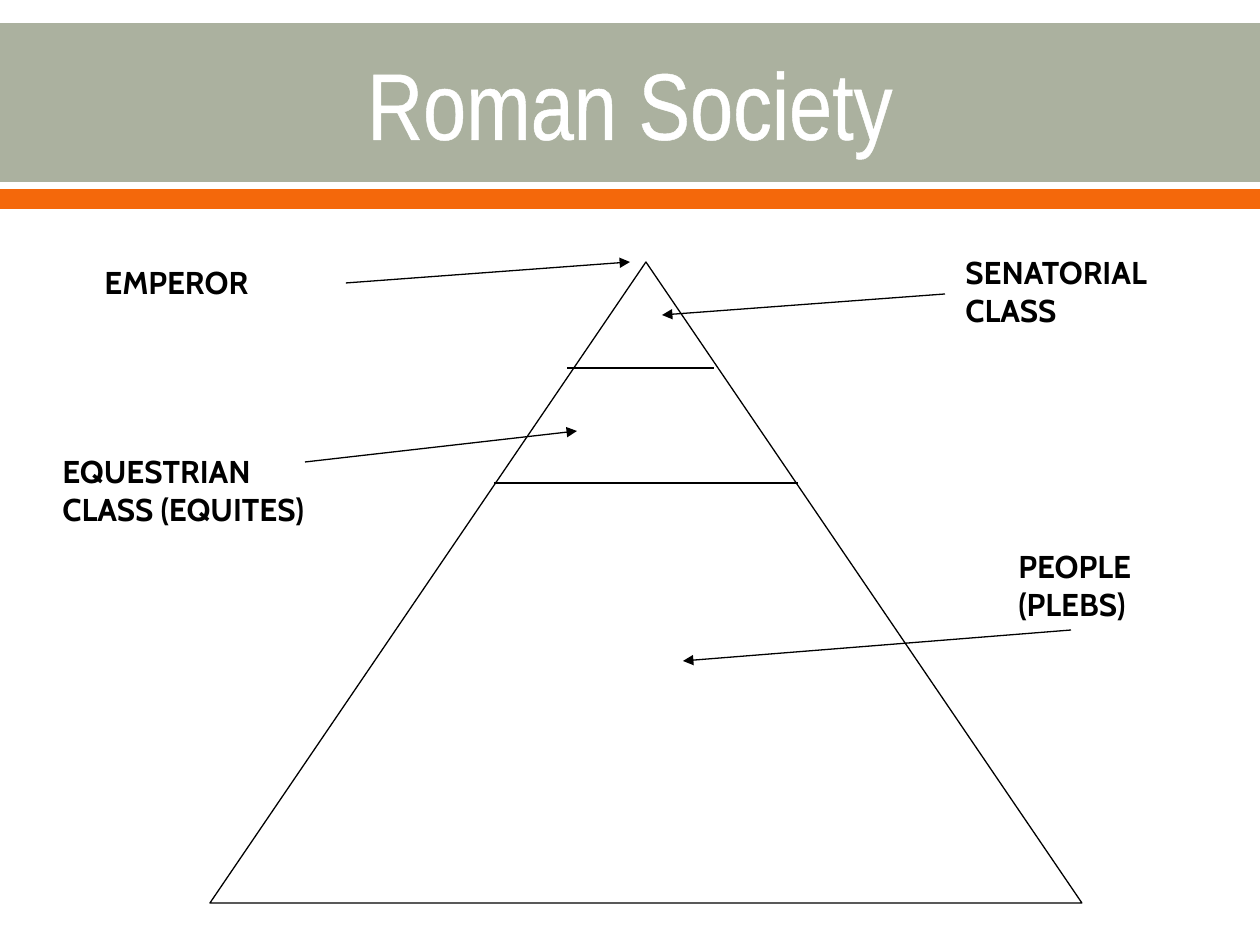
import pptx
import pptx.util
import pptx.dml.color
import pptx.enum.shapes
import pptx.enum.text
import pptx.oxml
import pptx.oxml.ns

PX = 914400 / 126
HUES = {"sage": "ABB19F", "orange": "F4680B", "white": "FFFFFF", "black": "000000"}
SHAPE = pptx.enum.shapes.MSO_SHAPE


def emu(*nums):
    """Turn px into EMU."""
    return [pptx.util.Emu(round(n * PX)) for n in nums]


def hue(name):
    return pptx.dml.color.RGBColor.from_string(HUES[name])


deck = pptx.Presentation()
deck.slide_width, deck.slide_height = emu(1260, 945)
slide = deck.slides.add_slide(deck.slide_layouts[5])
items = slide.shapes

# Header bands
for top, high, tint in [(23, 159, "sage"), (189, 20, "orange")]:
    band = items.add_shape(SHAPE.RECTANGLE, *emu(0, top, 1260, high))
    band.shadow.inherit = False
    band.fill.solid()
    band.fill.fore_color.rgb = hue(tint)
    band.line.fill.background()

# Title, raised above the bands
title = items.title
title.left, title.top, title.width, title.height = emu(63, 25, 1134, 154)
items._spTree.append(title._element)
title.text_frame.text = "Roman Society"
title.text_frame.vertical_anchor = pptx.enum.text.MSO_ANCHOR.MIDDLE
head = title.text_frame.paragraphs[0]
head.alignment = pptx.enum.text.PP_ALIGN.CENTER
head.font.size = pptx.util.Pt(54)
head.font.name = "Arial Narrow"
head.font.color.rgb = hue("white")
edge = pptx.oxml.parse_xml(
    f'<a:ln {pptx.oxml.ns.nsdecls("a")} w="13970"><a:solidFill>'
    f'<a:srgbClr val="{HUES["white"]}"/></a:solidFill></a:ln>')
head.runs[0]._r.get_or_add_rPr().insert(0, edge)

# Pyramid
cone = items.add_shape(SHAPE.ISOSCELES_TRIANGLE, *emu(210, 262, 872, 641))
cone.shadow.inherit = False
cone.fill.solid()
cone.fill.fore_color.rgb = hue("white")
cone.line.color.rgb = hue("black")
cone.line.width = pptx.util.Pt(0.75)

# Tier dividers, then pointers: start, end, arrowhead
lines = [
    (567, 368, 714, 368, False),
    (494, 483, 798, 483, False),
    (346, 283, 630, 262, True),
    (945, 294, 662, 315, True),
    (305, 462, 577, 431, True),
    (1071, 630, 683, 661, True),
]
for *ends, arrow in lines:
    line = items.add_connector(pptx.enum.shapes.MSO_CONNECTOR.STRAIGHT, *emu(*ends))
    line.line.color.rgb = hue("black")
    line.line.width = pptx.util.Pt(0.75)
    props = line._element.spPr
    pptx.oxml.ns.qn("a:ln")
    if arrow:
        tip = pptx.oxml.parse_xml(
            f'<a:tailEnd {pptx.oxml.ns.nsdecls("a")} type="triangle"/>')
        props.find(pptx.oxml.ns.qn("a:ln")).append(tip)
    props.append(pptx.oxml.parse_xml(f'<a:effectLst {pptx.oxml.ns.nsdecls("a")}/>'))

# Class labels; \v breaks a line, \n starts a paragraph
labels = [
    (92, 257, 185, 50, "EMPEROR"),
    (50, 446, 300, 88, "EQUESTRIAN\nCLASS (EQUITES)"),
    (953, 247, 231, 88, "SENATORIAL\vCLASS"),
    (1006, 541, 154, 88, "PEOPLE\n(PLEBS)"),
]
for *place, words in labels:
    frame = items.add_textbox(*emu(*place)).text_frame
    frame.word_wrap = False
    frame.auto_size = pptx.enum.text.MSO_AUTO_SIZE.SHAPE_TO_FIT_TEXT
    frame.text = words
    for para in frame.paragraphs:
        para.font.size = pptx.util.Pt(18)
        para.font.name = "Cabin"
        para.font.bold = True
        para.font.color.rgb = hue("black")

deck.save("out.pptx")
